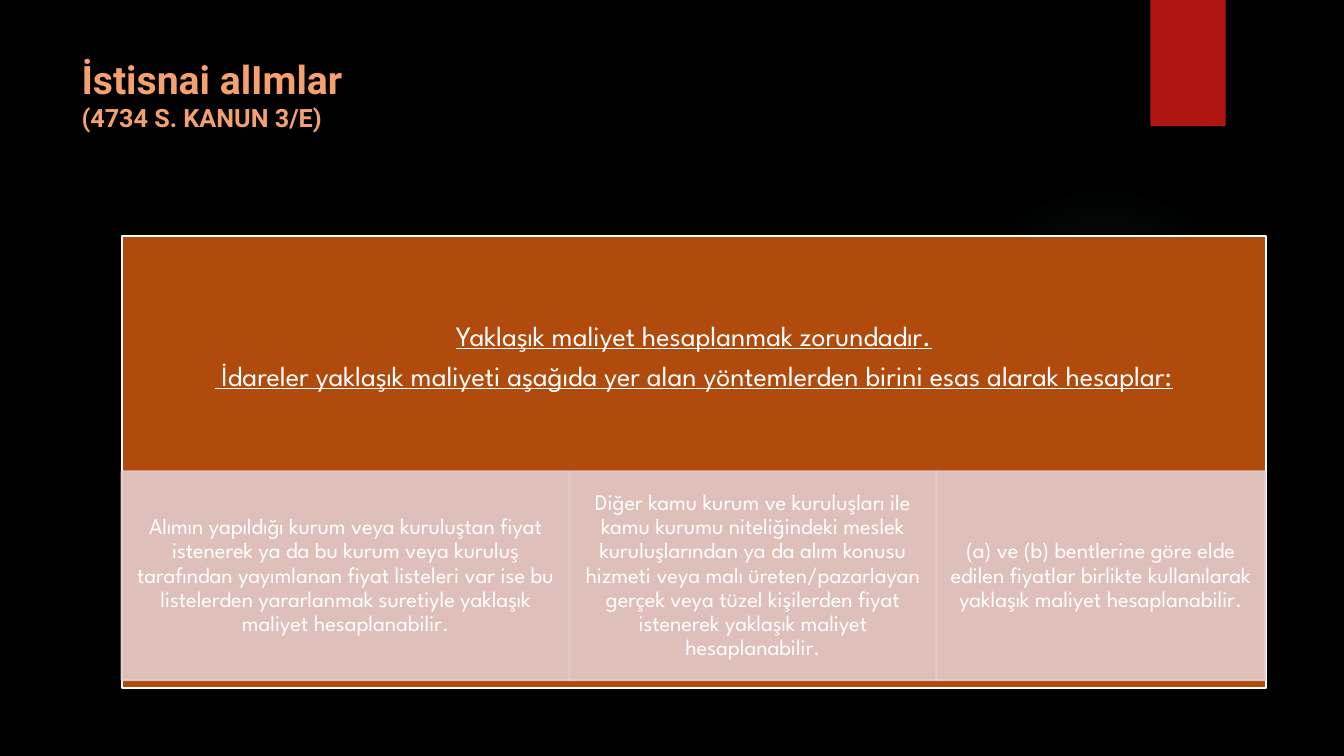
from lxml import etree
from pptx import Presentation
from pptx.dml.color import RGBColor
from pptx.enum import shapes, text
from pptx.oxml import ns, parse_xml
from pptx.util import Cm, Pt

BODY_FONT = "League Spartan"
TITLE_FONT = "Roboto"
WHITE = "FFFFFF"
PANEL_LEFT, PANEL_TOP, PANEL_WIDTH, PANEL_HEIGHT = 3.07, 5.94, 28.83, 11.4
METHOD_TOP, METHOD_HEIGHT = 11.88, 5.26

HEADING = [
    "Yaklaşık maliyet hesaplanmak zorundadır.",
    " İdareler yaklaşık maliyeti aşağıda yer alan yöntemlerden birini esas alarak hesaplar:",
]
METHODS = [
    (11.28, "Alımın yapıldığı kurum veya kuruluştan fiyat istenerek ya da bu kurum veya "
            "kuruluş tarafından yayımlanan fiyat listeleri var ise bu listelerden "
            "yararlanmak suretiyle yaklaşık maliyet hesaplanabilir."),
    (9.25, "Diğer kamu kurum ve kuruluşları ile kamu kurumu niteliğindeki meslek "
           "kuruluşlarından ya da alım konusu hizmeti veya malı üreten/pazarlayan gerçek "
           "veya tüzel kişilerden fiyat istenerek yaklaşık maliyet hesaplanabilir."),
    (8.28, "(a) ve (b) bentlerine göre elde edilen fiyatlar birlikte kullanılarak "
           "yaklaşık maliyet hesaplanabilir."),
]


def colour(hex_code):
    """Turn a hex string into a colour."""
    return RGBColor.from_string(hex_code)


def add_box(slide, left, top, width, height, fill, line=None):
    """Add a rectangle in centimetres with a solid fill and an optional outline."""
    shape = slide.shapes.add_shape(
        shapes.MSO_SHAPE.RECTANGLE, Cm(left), Cm(top), Cm(width), Cm(height))
    shape.shadow.inherit = False
    shape.fill.solid()
    shape.fill.fore_color.rgb = colour(fill)
    if line:
        shape.line.color.rgb = colour(line)
        shape.line.width = Pt(1.5)
    else:
        shape.line.fill.background()
    return shape


def set_opacity(shape, percent):
    """Make every colour of a shape's fill and outline partly transparent."""
    for element in shape.fill._xPr.iter(ns.qn("a:srgbClr")):
        etree.SubElement(element, ns.qn("a:alpha")).set("val", str(percent * 1000))


def add_glow(slide, left, top, size, hex_code):
    """Add a faint circle that fades out from its centre."""
    glow = slide.shapes.add_shape(
        shapes.MSO_SHAPE.OVAL, Cm(left), Cm(top), Cm(size), Cm(size))
    glow.shadow.inherit = False
    glow.line.fill.background()
    stops = "".join(
        f'<a:gs pos="{position}000"><a:srgbClr val="{hex_code}">'
        f'<a:alpha val="{alpha}000"/></a:srgbClr></a:gs>'
        for position, alpha in ((0, 7), (36, 6), (69, 0), (100, 0)))
    gradient = parse_xml(
        f'<a:gradFill {ns.nsdecls("a")}><a:gsLst>{stops}</a:gsLst><a:path path="circle">'
        '<a:fillToRect l="50000" t="50000" r="50000" b="50000"/></a:path></a:gradFill>')
    glow.element.spPr.find(ns.qn("a:prstGeom")).addnext(gradient)


def write_centred(shape, lines, size, side_inset, end_inset, underline=False):
    """Write centred white paragraphs into a shape."""
    frame = shape.text_frame
    frame.word_wrap = True
    frame.vertical_anchor = text.MSO_ANCHOR.MIDDLE
    frame.margin_left = frame.margin_right = Cm(side_inset)
    frame.margin_top = frame.margin_bottom = Cm(end_inset)
    frame.text = "\n".join(lines)
    for paragraph in frame.paragraphs:
        paragraph.alignment = text.PP_ALIGN.CENTER
        paragraph.line_spacing = 0.9
        paragraph.space_after = Pt(size * 0.35)
        for run in paragraph.runs:
            run.font.name = BODY_FONT
            run.font.size = Pt(size)
            run.font.underline = underline
            run.font.color.rgb = colour(WHITE)


def write_title(slide):
    """Place and format the two-line title."""
    title = slide.shapes.title
    title.left, title.top, title.width, title.height = Cm(1.8), Cm(1.27), Cm(26.14), Cm(3.3)
    frame = title.text_frame
    frame.vertical_anchor = text.MSO_ANCHOR.TOP
    paragraph = frame.paragraphs[0]
    paragraph.text = "İstisnai alImlar\n(4734 S. KANUN 3/E)"
    paragraph.alignment = text.PP_ALIGN.LEFT
    for run, size in zip(paragraph.runs, (28, 18)):
        run.font.name = TITLE_FONT
        run.font.size = Pt(size)
        run.font.bold = True
        run.font.color.rgb = colour("F4A16F")


def add_methods(slide):
    """Add the row of cost calculation methods, side by side."""
    left = PANEL_LEFT
    for width, method in METHODS:
        box = add_box(slide, left, METHOD_TOP, width, METHOD_HEIGHT, "E4CCCC", "E4CCCC")
        set_opacity(box, 90)
        write_centred(box, [method], 16, 0.3, 0.05)
        left += width


def main():
    """Build the slide and save it."""
    presentation = Presentation()
    presentation.slide_width, presentation.slide_height = Cm(33.87), Cm(19.05)
    slide = presentation.slides.add_slide(presentation.slide_layouts[5])
    slide.background.fill.solid()
    slide.background.fill.fore_color.rgb = colour("000000")
    add_glow(slide, 23.9, 4.65, 7.82, "50B9C1")
    add_box(slide, 28.99, 0, 1.9, 3.18, "B01513")
    write_title(slide)
    add_box(slide, PANEL_LEFT, PANEL_TOP, PANEL_WIDTH, PANEL_HEIGHT, "B04A0D", WHITE)
    heading = slide.shapes.add_textbox(
        Cm(PANEL_LEFT), Cm(PANEL_TOP), Cm(PANEL_WIDTH), Cm(6.15))
    write_centred(heading, HEADING, 20, 0.4, 0.4, underline=True)
    add_methods(slide)
    presentation.save("out.pptx")


if __name__ == "__main__":
    main()
